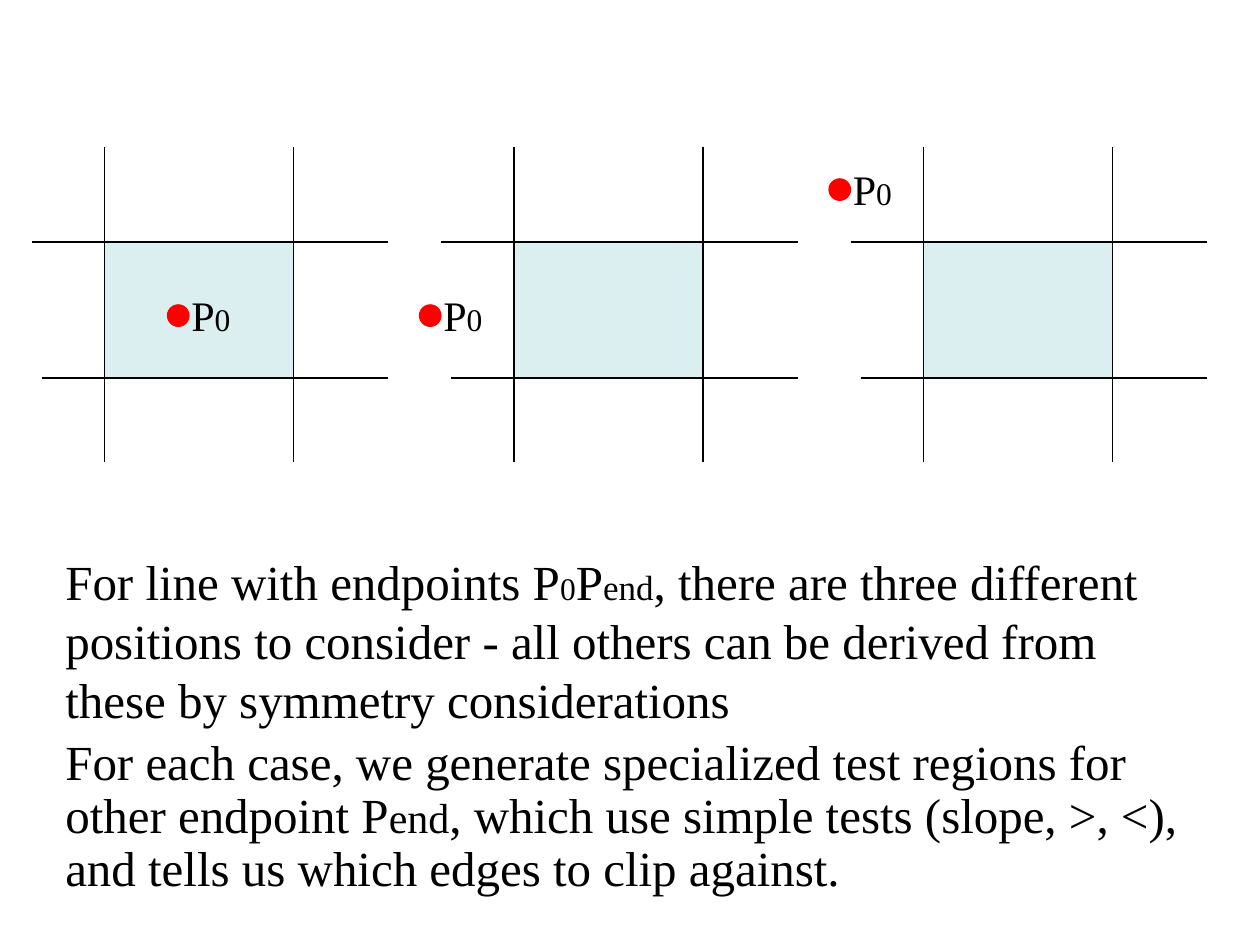
from lxml.etree import SubElement
from pptx import Presentation
from pptx.dml.color import RGBColor
from pptx.enum.shapes import MSO_CONNECTOR, MSO_SHAPE
from pptx.enum.text import MSO_AUTO_SIZE
from pptx.oxml.ns import qn
from pptx.util import Inches, Pt

# Content: runs are (text, size in points)
LABEL = [{"space_before": 50, "runs": [("P", 24), ("0", 18)]}]
EXPLANATION = [
    {"space_before": 50, "runs": [
        ("For line with endpoints P", 28), ("0", 18), ("P", 28), ("end", 20),
        (", there are three different positions to consider - all others "
         "can be derived from these by symmetry considerations", 28)]},
    {"space_before": 20, "line_spacing": 0.9, "runs": [
        ("For each case, we generate specialized test regions for "
         "other endpoint P", 28), ("end", 24),
        (", which use simple tests (slope, >, <), and tells us "
         "which edges to clip against.", 28)]},
]
ENDPOINTS = [(1.33, 2.42), (3.33, 2.42), (6.58, 1.42)]  # P0 in each case

# Clip window geometry in inches
FIRST_LEFT, CASE_STEP = 0.83, 3.25
TOP, WIDTH, HEIGHT = 1.92, 1.5, 1.08
LINE_TOP, LINE_BOTTOM = 1.17, 3.67
DOT = 0.17
BLACK, RED, WINDOW = "000000", "FF0000", "BBE0E3"


def color(hex_string):
    return RGBColor.from_string(hex_string)


def add_filled(slide, preset, box, fill, line, alpha=None):
    shape = slide.shapes.add_shape(preset, *map(Inches, box))
    shape.shadow.inherit = False
    shape.fill.solid()
    shape.fill.fore_color.rgb = color(fill)
    shape.line.color.rgb = color(line)
    shape.line.width = Pt(0.75)
    if alpha is not None:
        fill_color = shape.fill._xPr.find(qn("a:solidFill"))[0]
        SubElement(fill_color, qn("a:alpha"), val=str(alpha * 1000))


def add_line(slide, *ends):
    line = slide.shapes.add_connector(MSO_CONNECTOR.STRAIGHT, *map(Inches, ends))
    line.line.color.rgb = color(BLACK)
    line.line.width = Pt(0.75)
    SubElement(line._element.spPr, qn("a:effectLst"))


def add_text(slide, box, paragraphs):
    frame = slide.shapes.add_textbox(*map(Inches, box)).text_frame
    frame.word_wrap = True
    frame.auto_size = MSO_AUTO_SIZE.SHAPE_TO_FIT_TEXT
    for index, content in enumerate(paragraphs):
        paragraph = frame.add_paragraph() if index else frame.paragraphs[0]
        paragraph.line_spacing = content.get("line_spacing")
        # Space before as a percentage of the text size
        paragraph.space_before = Pt(0)
        spacing = paragraph._p.pPr.find(qn("a:spcBef"))
        spacing.remove(spacing[0])
        SubElement(spacing, qn("a:spcPct"), val=str(content["space_before"] * 1000))
        for text, size in content["runs"]:
            run = paragraph.add_run()
            run.text = text
            formats = {"name": "Times New Roman", "size": Pt(size)}
            for name, value in formats.items():
                setattr(run.font, name, value)
            run.font.color.rgb = color(BLACK)


def add_case(slide, left, endpoint):
    right, bottom = left + WIDTH, TOP + HEIGHT
    add_filled(slide, MSO_SHAPE.RECTANGLE, (left, TOP, WIDTH, HEIGHT),
               WINDOW, BLACK, alpha=50)
    # Extended window edges
    for x in (left, right):
        add_line(slide, x, LINE_TOP, x, LINE_BOTTOM)
    for y, overhang in ((TOP, 0.58), (bottom, 0.5)):
        add_line(slide, left - overhang, y, right + 0.75, y)
    # Endpoint and its label
    x, y = endpoint
    add_text(slide, (x + 0.09, y - 0.17, 1.42, 0.5), LABEL)
    add_filled(slide, MSO_SHAPE.OVAL, (x, y, DOT, DOT), RED, RED)


def main():
    presentation = Presentation()
    presentation.slide_width, presentation.slide_height = Inches(10), Inches(7.5)
    slide = presentation.slides.add_slide(presentation.slide_layouts[6])
    for index, endpoint in enumerate(ENDPOINTS):
        add_case(slide, FIRST_LEFT + index * CASE_STEP, endpoint)
    add_text(slide, (0.42, 4.33, 9.15, 2.88), EXPLANATION)
    presentation.save("out.pptx")


if __name__ == "__main__":
    main()
